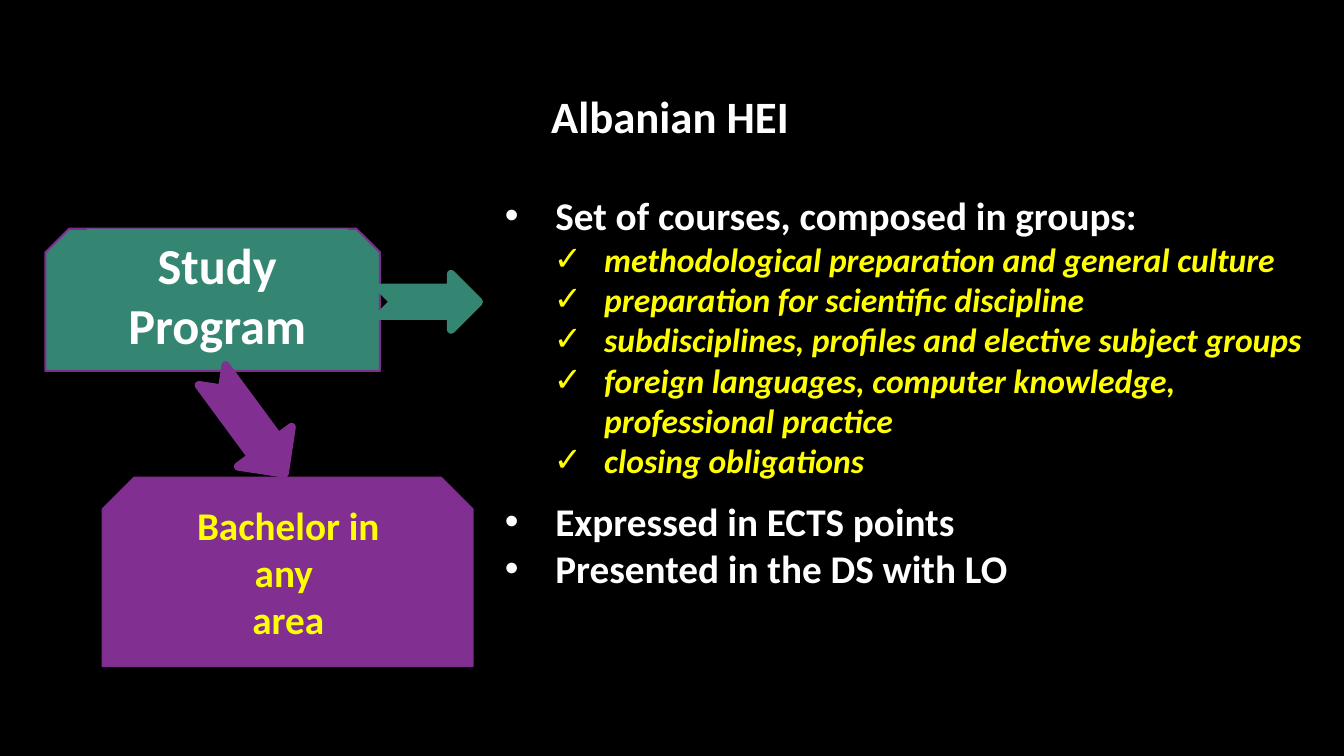
from lxml.etree import SubElement
from pptx import Presentation
from pptx.dml.color import RGBColor
from pptx.enum.shapes import MSO_SHAPE as Kind
from pptx.enum.text import MSO_ANCHOR as Anchor, MSO_AUTO_SIZE as Fit, PP_ALIGN as Align
from pptx.oxml.ns import qn
from pptx.util import Pt

BLACK = RGBColor(0, 0, 0)
WHITE = RGBColor(255, 255, 255)
YELLOW = RGBColor(255, 255, 0)
GREEN = RGBColor(0x34, 0x86, 0x72)
PURPLE = RGBColor(0x81, 0x2F, 0x91)
EDGE = RGBColor(0x7F, 0x2E, 0x8F)
FONT = "Calibri"

TITLE = ("Albanian HEI", (321.8, 59.8, 313.9, 46.1))
LIST_BOX = (353.5, 133.2, 594, 329.8)
# level, text, space before
LIST = [
    (0, "Set of courses, composed in groups:", 0),
    (1, "methodological preparation and general culture", 0),
    (1, "preparation for scientific discipline", 0),
    (1, "subdisciplines, profiles and elective subject groups", 0),
    (1, "foreign languages, computer knowledge, professional practice", 0),
    (1, "closing obligations", 0),
    (0, "Expressed in ECTS points", 12.2),
    (0, "Presented in the DS with LO", 0),
]
# bullet, left margin, size, colour, italic
LEVELS = [
    ("•", 36, 28, WHITE, False),
    ("✓", 70.9, 24, YELLOW, True),
]
MARK_FONT = "Arial"
HANG = 36
# frame box, label box, fill, lines, size, text colour
CARDS = [
    ((32.4, 163.4, 239, 101.5), (61.9, 163.4, 186.5, 94.3),
     GREEN, ["Study Program"], 36, WHITE),
    ((73.4, 341.3, 264.2, 134.6), (113, 354.2, 185.8, 108.7),
     PURPLE, ["Bachelor in any ", "area"], 28, YELLOW),
]
# box, turn, colour
ARROWS = [
    ((271.4, 195.8, 70.6, 39.6), 0, GREEN),
    ((133.9, 279.4, 87.1, 47.5), 53.6, PURPLE),
]


def pts(box):
    return [Pt(v) for v in box]


def place(shape, box):
    shape.left, shape.top, shape.width, shape.height = pts(box)


def draw(home, kind, box, fill, edge=None, width=0):
    shape = home.add_shape(kind, *pts(box))
    shape.shadow.inherit = False
    shape.fill.solid()
    shape.fill.fore_color.rgb = fill
    if edge is None:
        shape.line.fill.background()
    else:
        shape.line.color.rgb = edge
        shape.line.width = Pt(width)
    return shape


def write(para, text, size, color, align=Align.CENTER, italic=False, before=0):
    para.text = text
    para.alignment = align
    para.space_before = Pt(before)
    font = para.font
    font.name, font.size, font.bold, font.italic = FONT, Pt(size), True, italic
    font.color.rgb = color


def bullet(para, mark, left):
    props = para._p.get_or_add_pPr()
    props.set("marL", str(Pt(left)))
    props.set("indent", str(-Pt(HANG)))
    SubElement(props, qn("a:buFont"), typeface=MARK_FONT)
    SubElement(props, qn("a:buChar"), char=mark)


def setup(frame, anchor=Anchor.TOP):
    frame.word_wrap = True
    frame.auto_size = Fit.NONE
    frame.vertical_anchor = anchor


def paras(frame, count):
    """Return the first paragraph followed by new ones, count in all."""
    return [frame.paragraphs[0]] + [frame.add_paragraph() for _ in range(count - 1)]


def main():
    deck = Presentation()
    deck.slide_width, deck.slide_height = Pt(960), Pt(540)
    slide = deck.slides.add_slide(deck.slide_layouts[1])
    slide.background.fill.solid()
    slide.background.fill.fore_color.rgb = BLACK

    title = slide.shapes.title
    place(title, TITLE[1])
    setup(title.text_frame, Anchor.MIDDLE)
    write(title.text_frame.paragraphs[0], TITLE[0], 32, WHITE)

    body = slide.placeholders[1]
    place(body, LIST_BOX)
    setup(body.text_frame)
    for para, (level, text, gap) in zip(paras(body.text_frame, len(LIST)), LIST):
        mark, left, size, color, italic = LEVELS[level]
        para.level = level
        bullet(para, mark, left)
        write(para, text, size, color, Align.LEFT, italic, gap)

    for outer, inner, fill, lines, size, color in CARDS:
        card = slide.shapes.add_group_shape().shapes
        draw(card, Kind.SNIP_2_SAME_RECTANGLE, outer, fill, EDGE, 1.5)
        frame = draw(card, Kind.RECTANGLE, inner, fill).text_frame
        setup(frame)
        for para, line in zip(paras(frame, len(lines)), lines):
            write(para, line, size, color)

    for box, turn, color in ARROWS:
        arrow = draw(slide.shapes, Kind.NOTCHED_RIGHT_ARROW, box, color, color, 6)
        arrow.rotation = turn

    deck.save("out.pptx")


if __name__ == "__main__":
    main()
